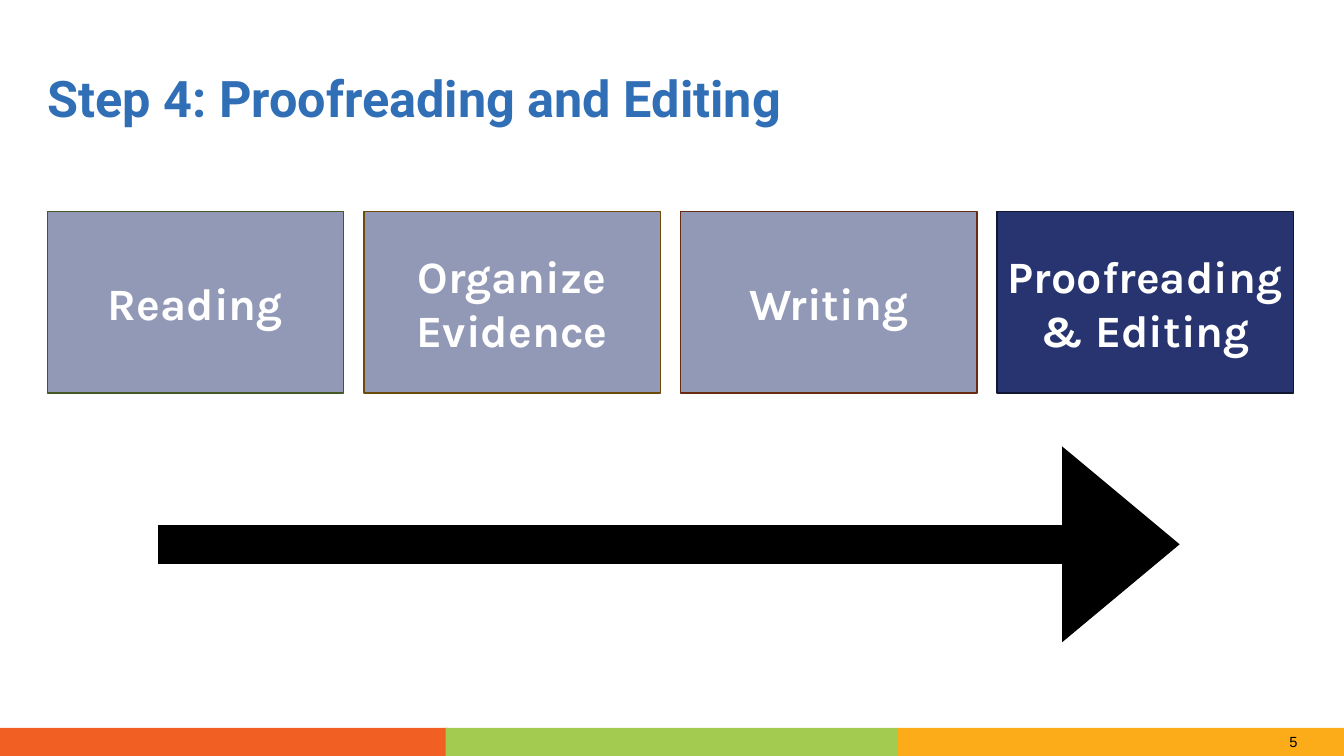
import pptx
import pptx.dml.color
import pptx.enum.shapes
import pptx.enum.text
import pptx.oxml
import pptx.oxml.ns
import pptx.util
from lxml import etree

Inches = pptx.util.Inches
Pt = pptx.util.Pt
RGBColor = pptx.dml.color.RGBColor
MIDDLE = pptx.enum.text.MSO_ANCHOR.MIDDLE
CENTER = pptx.enum.text.PP_ALIGN.CENTER
LEFT = pptx.enum.text.PP_ALIGN.LEFT

BLACK = RGBColor(0x00, 0x00, 0x00)
WHITE = RGBColor(0xFF, 0xFF, 0xFF)
BLUE = RGBColor(0x30, 0x6E, 0xB6)
NAVY = RGBColor(0x27, 0x34, 0x6F)
ORANGE = RGBColor(0xF1, 0x5F, 0x22)
GREEN = RGBColor(0xA2, 0xCB, 0x4F)
YELLOW = RGBColor(0xFB, 0xAC, 0x18)
GREEN_EDGE = RGBColor(0x47, 0x59, 0x23)
YELLOW_EDGE = RGBColor(0x6E, 0x4B, 0x0B)
ORANGE_EDGE = RGBColor(0x6A, 0x2A, 0x0F)
NAVY_EDGE = RGBColor(0x11, 0x17, 0x31)


def add_xml(parent, tag, **attributes):
    return etree.SubElement(parent, pptx.oxml.ns.qn(tag), **attributes)


class SlideBuilder:
    def __init__(self, slide):
        self.shapes = slide.shapes

    def label(self, sp, text, size, font, color, bold=False, align=LEFT):
        tf = sp.text_frame
        tf.word_wrap = True
        tf.vertical_anchor = MIDDLE
        p = tf.paragraphs[0]
        p.text = text
        p.alignment = align
        p.font.size = Pt(size)
        p.font.name = font
        p.font.bold = bold
        p.font.color.rgb = color
        return tf

    def text(self, x, y, w, h, text, size, font, color, bold=False):
        sp = self.shapes.add_textbox(Inches(x), Inches(y), Inches(w), Inches(h))
        return self.label(sp, text, size, font, color, bold)

    def box(self, x, y, w, h, fill, edge=None, alpha=None):
        sp = self.shapes.add_shape(
            pptx.enum.shapes.MSO_SHAPE.RECTANGLE,
            Inches(x), Inches(y), Inches(w), Inches(h))
        sp.shadow.inherit = False
        sp.fill.solid()
        sp.fill.fore_color.rgb = fill
        if alpha is not None:
            color = sp._element.spPr.find(".//" + pptx.oxml.ns.qn("a:srgbClr"))
            add_xml(color, "a:alpha", val=str(alpha * 1000))
        if edge is None:
            sp.line.fill.background()
        else:
            sp.line.color.rgb = edge
            sp.line.width = Pt(1)
        return sp

    def arrow(self, x1, x2, y, color, width):
        line = self.shapes.add_connector(
            pptx.enum.shapes.MSO_CONNECTOR.STRAIGHT,
            Inches(x1), Inches(y), Inches(x2), Inches(y))
        line.line.color.rgb = color
        line.line.width = Pt(width)
        spPr = line._element.spPr
        add_xml(spPr.find(pptx.oxml.ns.qn("a:ln")), "a:tailEnd",
                type="triangle", w="lg", len="med")
        add_xml(spPr, "a:effectLst")


def main():
    prs = pptx.Presentation()
    prs.slide_width = Inches(13.33)
    prs.slide_height = Inches(7.5)
    s = SlideBuilder(prs.slides.add_slide(prs.slide_layouts[6]))

    # Footer band and slide number
    for x, w, color in [(8.89, 4.44, YELLOW), (0, 4.44, ORANGE), (4.42, 4.48, GREEN)]:
        s.box(x, 7.22, w, 0.28, color)
    s.text(12.69, 7.22, 0.38, 0.28, "5", 10.5, "Arial", BLACK)

    # Title
    tf = s.text(0.47, 0.77, 12.4, 0.47, "Step 4: Proofreading and Editing",
                36, "Roboto", BLUE, bold=True)
    tf.margin_left = tf.margin_top = tf.margin_right = tf.margin_bottom = 0
    tf.paragraphs[0].line_spacing = 0.9

    # Steps: the earlier ones are faded, the current one is solid
    steps = [
        ("Reading", GREEN_EDGE, 50),
        ("Organize Evidence", YELLOW_EDGE, 50),
        ("Writing", ORANGE_EDGE, 50),
        ("Proofreading & Editing", NAVY_EDGE, None),
    ]
    for i, (name, edge, alpha) in enumerate(steps):
        sp = s.box(0.47 + i * 3.14, 2.1, 2.94, 1.8, NAVY, edge, alpha)
        s.label(sp, name, 32, "Karla", WHITE, bold=True, align=CENTER)

    # Progress arrow
    s.arrow(1.57, 11.7, 5.4, BLACK, 28)

    prs.save("out.pptx")


if __name__ == "__main__":
    main()
